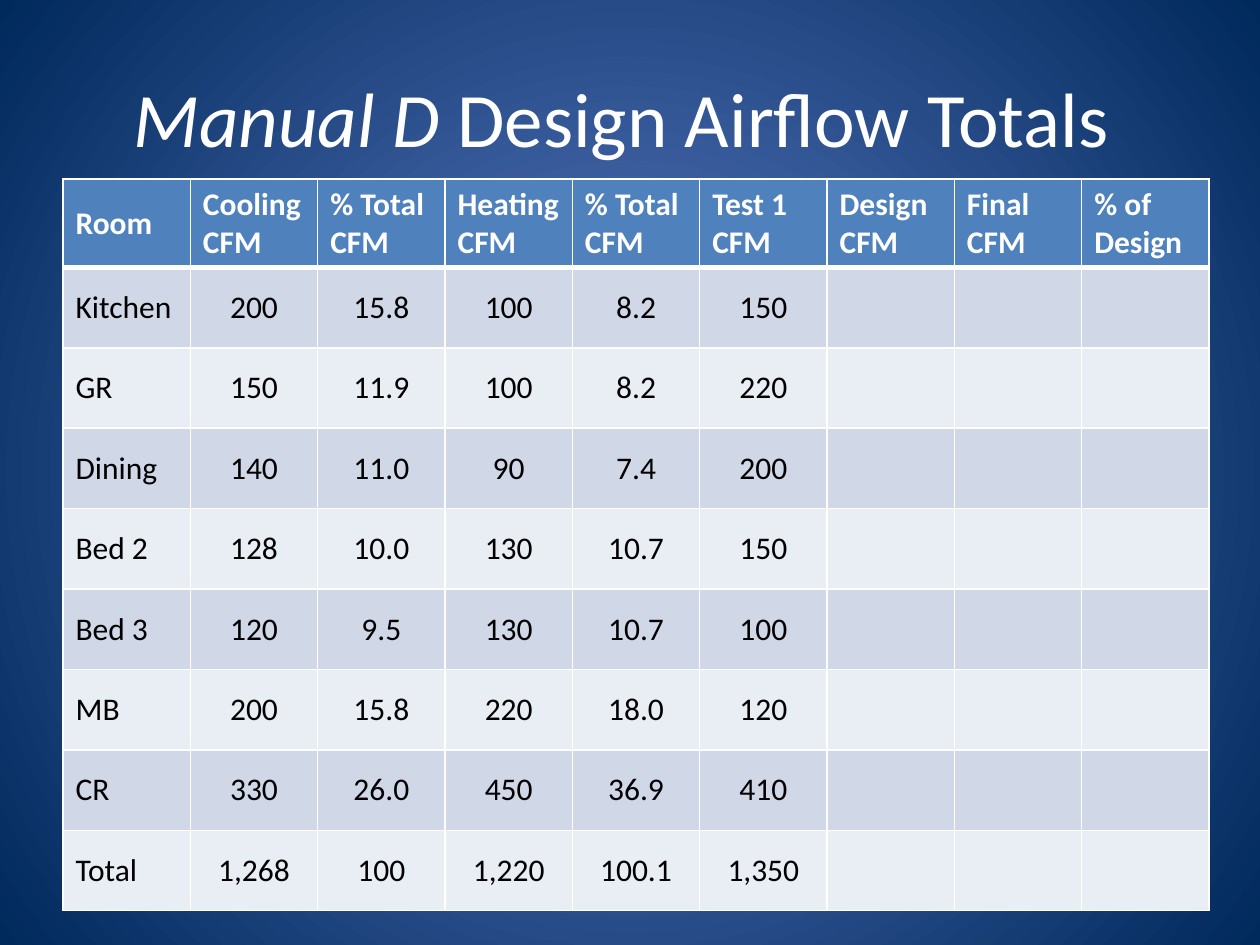
from typing import NamedTuple

from lxml.etree import SubElement
from pptx import Presentation
from pptx.dml.color import RGBColor
from pptx.enum.text import MSO_ANCHOR as Anchor, PP_ALIGN as Align
from pptx.oxml.ns import qn
from pptx.util import Cm, Pt

COLORS = {
    "glow": "5E7CC5",
    "navy": "00295C",
    "white": "FFFFFF",
    "black": "000000",
    "header": "4F81BD",
    "odd_row": "D0D8E8",
    "even_row": "E9EDF4",
}
FONT = "Calibri"


class Room(NamedTuple):
    name: str
    cooling: str
    cooling_share: str
    heating: str
    heating_share: str
    first_test: str


HEADINGS = ["Room", "Cooling CFM", "% Total CFM", "Heating CFM", "% Total CFM",
            "Test 1 CFM", "Design CFM", "Final CFM", "% of Design"]
ROOMS = [
    Room("Kitchen", "200", "15.8", "100", "8.2", "150"),
    Room("GR", "150", "11.9", "100", "8.2", "220"),
    Room("Dining", "140", "11.0", "90", "7.4", "200"),
    Room("Bed 2", "128", "10.0", "130", "10.7", "150"),
    Room("Bed 3", "120", "9.5", "130", "10.7", "100"),
    Room("MB", "200", "15.8", "220", "18.0", "120"),
    Room("CR", "330", "26.0", "450", "36.9", "410"),
    Room("Total", "1,268", "100", "1,220", "100.1", "1,350"),
]


def rgb(name: str) -> RGBColor:
    return RGBColor.from_string(COLORS[name])


def add_text(paragraph, text: str, *, size: float = 18, color: str = "black",
             bold: bool = False, italic: bool = False, align=Align.LEFT) -> None:
    paragraph.alignment = align
    run = paragraph.add_run()
    run.text = text
    font = run.font
    font.name, font.size, font.bold, font.italic = FONT, Pt(size), bold, italic
    font.color.rgb = rgb(color)


def set_background(slide) -> None:
    """Fill the slide with a gradient that spreads from its centre."""
    fill = slide.background.fill
    fill.gradient()
    for stop, color in zip(fill.gradient_stops, ("glow", "navy")):
        stop.color.rgb = rgb(color)
    linear = slide.element.find(".//" + qn("a:lin"))
    gradient = linear.getparent()
    gradient.remove(linear)
    radial = SubElement(gradient, qn("a:path"), path="circle")
    SubElement(radial, qn("a:fillToRect"), l="50000", t="50000", r="50000", b="50000")


def set_borders(cell, *, top: float = 1, bottom: float = 1) -> None:
    """Draw white cell borders; must run before the cell is filled."""
    properties = cell._tc.get_or_add_tcPr()
    for side, width in (("L", 1), ("R", 1), ("T", top), ("B", bottom)):
        line = SubElement(properties, qn(f"a:ln{side}"), w=str(Pt(width)))
        solid = SubElement(line, qn("a:solidFill"))
        SubElement(solid, qn("a:srgbClr"), val=COLORS["white"])


def add_title(slide) -> None:
    box = slide.shapes.add_textbox(Cm(1.27), Cm(0.76), Cm(22.86), Cm(3.18))
    frame = box.text_frame
    frame.word_wrap = True
    frame.vertical_anchor = Anchor.MIDDLE
    for text, italic in (("Manual D ", True), ("Design Airflow Totals ", False)):
        add_text(frame.paragraphs[0], text, size=44, color="white",
                 italic=italic, align=Align.CENTER)


def add_airflow_table(slide) -> None:
    rows = [HEADINGS, *ROOMS]
    width, height, header_height = Cm(23.11), Cm(14.75), Cm(1.78)
    table = slide.shapes.add_table(len(rows), len(HEADINGS), Cm(1.27), Cm(3.61),
                                   width, height).table
    for column in table.columns:
        column.width = width // len(HEADINGS)
    for index, values in enumerate(rows):
        header = index == 0
        row = table.rows[index]
        row.height = header_height if header else (height - header_height) // len(ROOMS)
        fill = "header" if header else "odd_row" if index % 2 else "even_row"
        for column, cell in enumerate(row.cells):
            set_borders(cell, top=3 if index == 1 else 1, bottom=3 if header else 1)
            cell.fill.solid()
            cell.fill.fore_color.rgb = rgb(fill)
            cell.vertical_anchor = Anchor.MIDDLE
            if column < len(values):
                add_text(cell.text_frame.paragraphs[0], values[column],
                         color="white" if header else "black", bold=header,
                         align=Align.LEFT if header or column == 0 else Align.CENTER)


def main() -> None:
    presentation = Presentation()
    presentation.slide_width, presentation.slide_height = Cm(25.4), Cm(19.05)
    slide = presentation.slides.add_slide(presentation.slide_layouts[6])
    set_background(slide)
    add_title(slide)
    add_airflow_table(slide)
    presentation.save("out.pptx")


if __name__ == "__main__":
    main()
